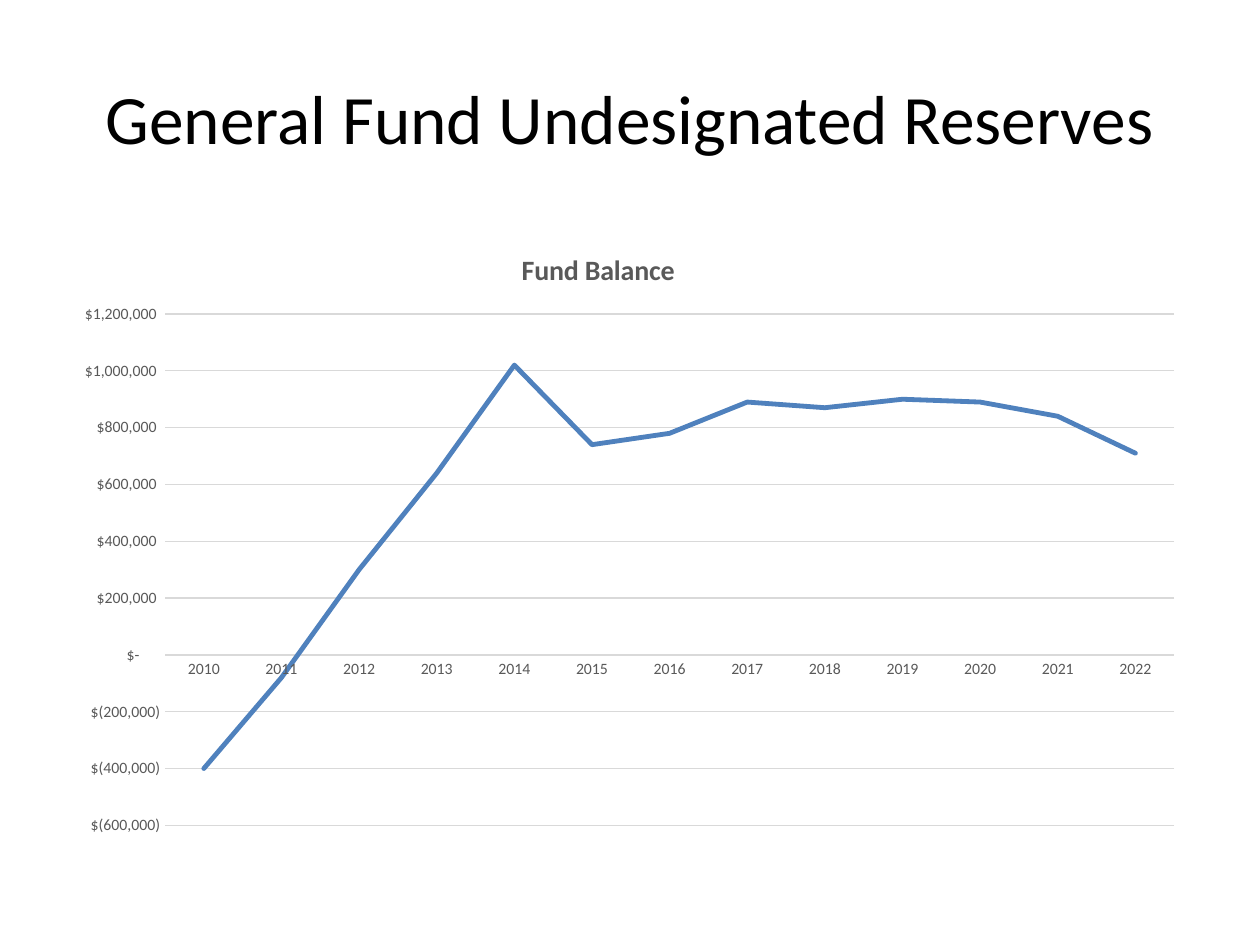
from dataclasses import dataclass

from lxml.etree import SubElement
from pptx import Presentation
from pptx.chart.data import CategoryChartData as ChartData
from pptx.dml.color import RGBColor
from pptx.enum.chart import XL_CHART_TYPE as ChartType
from pptx.enum.chart import XL_MARKER_STYLE as Marker
from pptx.enum.chart import XL_TICK_MARK as Tick
from pptx.enum.text import MSO_ANCHOR as Anchor
from pptx.enum.text import PP_ALIGN as Align
from pptx.oxml.ns import qn
from pptx.util import Inches, Pt


@dataclass(frozen=True)
class Theme:
    """Hold the colours, typeface and type sizes of the slide."""
    font: str = "Calibri"
    black: str = "000000"
    grey: str = "595959"
    grid: str = "D9D9D9"
    blue: str = "4F81BD"
    heading: float = 39.6
    chart_title: float = 16
    chart: float = 10
    axis: float = 9


THEME = Theme()
YEARS = [str(year) for year in range(2010, 2023)]
BALANCES = [-400000, -80000, 300000, 640000, 1020000, 740000, 780000,
            890000, 870000, 900000, 890000, 840000, 710000]
MONEY = '_("$"* #,##0_);_("$"* \\(#,##0\\);_("$"* "-"??_);_(@_)'


def set_all(target, **values):
    """Set each named value as an attribute of the target."""
    for name, value in values.items():
        setattr(target, name, value)


def style_font(font, size, color, bold=False):
    """Apply the theme typeface with a size, colour and weight."""
    set_all(font, name=THEME.font, size=Pt(size), bold=bold)
    font.color.rgb = RGBColor.from_string(color)


def style_line(line, color, width):
    """Give a line its colour and width in points."""
    line.color.rgb = RGBColor.from_string(color)
    line.width = Pt(width)


def place(element, **fractions):
    """Lay out a chart part by fractions of the chart area."""
    layout = element.find(qn("c:layout"))
    if layout is None:
        layout = element.makeelement(qn("c:layout"))
        element.insert(0, layout)
    manual = SubElement(layout, qn("c:manualLayout"))
    if "w" in fractions:
        SubElement(manual, qn("c:layoutTarget"), val="inner")
    for side in ("x", "y"):
        SubElement(manual, qn(f"c:{side}Mode"), val="edge")
    for side, value in fractions.items():
        SubElement(manual, qn(f"c:{side}"), val=str(value))


def add_heading(page, text):
    """Add the centred slide heading."""
    box = page.shapes.add_textbox(Inches(0.5), Inches(0.3), Inches(9), Inches(1.25))
    set_all(box.text_frame, word_wrap=True, vertical_anchor=Anchor.MIDDLE)
    para = box.text_frame.paragraphs[0]
    para.alignment = Align.CENTER
    span = para.add_run()
    span.text = text
    style_font(span.font, THEME.heading, THEME.black)


def style_title(chart, text):
    """Write and place the chart title."""
    span = chart.chart_title.text_frame.paragraphs[0].add_run()
    span.text = text
    style_font(span.font, THEME.chart_title, THEME.grey, bold=True)
    place(chart.element.find(".//" + qn("c:title")), x=0.4, y=0.04)


def style_axes(chart):
    """Format the year axis and the dollar axis."""
    years, dollars = chart.category_axis, chart.value_axis
    for axis in (years, dollars):
        set_all(axis, major_tick_mark=Tick.NONE, minor_tick_mark=Tick.NONE)
        style_font(axis.tick_labels.font, THEME.axis, THEME.grey)
    style_line(years.format.line, THEME.grid, 1)
    set_all(dollars, minimum_scale=-600000, maximum_scale=1200000,
            major_unit=200000, has_major_gridlines=True)
    set_all(dollars.tick_labels, number_format=MONEY, number_format_is_linked=False)
    dollars.format.line.fill.background()
    style_line(dollars.major_gridlines.format.line, THEME.grid, 0.75)


def add_balance_chart(page, title):
    """Add the line chart of yearly balances."""
    data = ChartData()
    data.categories = YEARS
    data.add_series("Series 1", BALANCES)
    chart = page.shapes.add_chart(ChartType.LINE, Inches(0.5), Inches(1.75),
                                  Inches(9), Inches(4.95), data).chart
    set_all(chart, has_legend=False, has_title=True)
    style_font(chart.font, THEME.chart, THEME.black)
    style_title(chart, title)
    style_axes(chart)
    place(chart.element.find(".//" + qn("c:plotArea")), x=0.09, y=0.15, w=0.89, h=0.82)

    plot = chart.plots[0]
    plot.vary_by_categories = False
    series = plot.series[0]
    series.smooth = False
    series.marker.style = Marker.NONE
    style_line(series.format.line, THEME.blue, 2.75)
    chart.element.find(f".//{qn('c:ser')}/{qn('c:spPr')}/{qn('a:ln')}").set("cap", "rnd")


def main():
    """Build the slide and save it."""
    deck = Presentation()
    set_all(deck, slide_width=Inches(10), slide_height=Inches(7.5))
    page = deck.slides.add_slide(deck.slide_layouts[6])
    add_heading(page, "General Fund Undesignated Reserves")
    add_balance_chart(page, "Fund Balance")
    deck.save("out.pptx")


if __name__ == "__main__":
    main()
